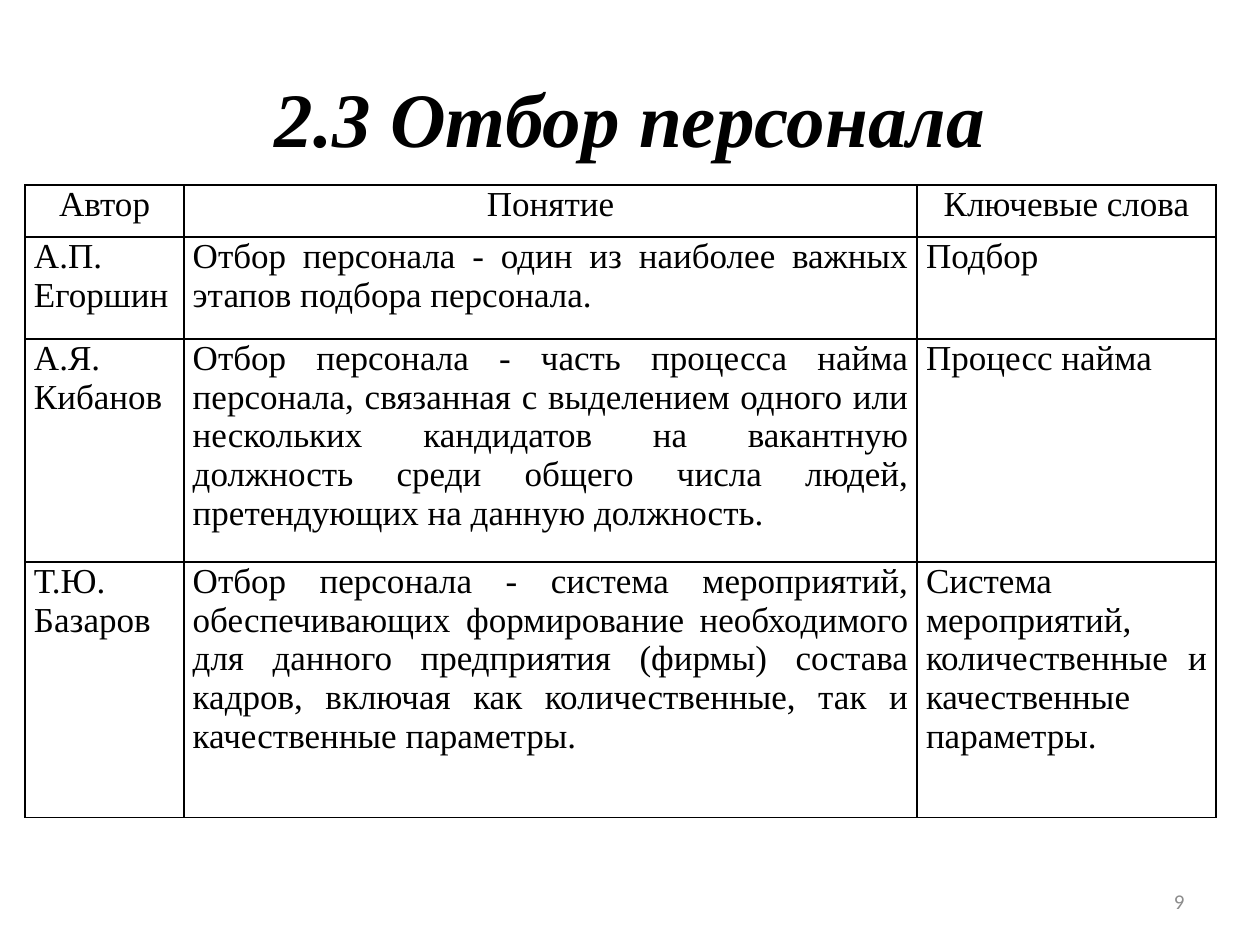
from lxml import etree
from pptx import Presentation
from pptx.dml.color import RGBColor
from pptx.enum.text import MSO_ANCHOR, PP_ALIGN
from pptx.oxml.ns import qn
from pptx.util import Inches, Pt

BLACK = RGBColor(0x00, 0x00, 0x00)
GRAY = RGBColor(0x8C, 0x8C, 0x8C)
SERIF = "Times New Roman"
COLUMN_WIDTHS = [1.26, 5.82, 2.37]
ROW_HEIGHTS = [0.41, 0.81, 1.77, 2.03]
DEFINITIONS = [
    ["Автор", "Понятие", "Ключевые слова"],
    ["А.П. Егоршин",
     "Отбор персонала - один из наиболее важных этапов подбора персонала.",
     "Подбор"],
    ["А.Я. Кибанов",
     "Отбор персонала - часть процесса найма персонала, связанная с выделением "
     "одного или нескольких кандидатов на вакантную должность среди общего числа "
     "людей, претендующих на данную должность.",
     "Процесс найма"],
    ["Т.Ю. Базаров",
     "Отбор персонала - система мероприятий, обеспечивающих формирование "
     "необходимого для данного предприятия (фирмы) состава кадров, включая как "
     "количественные, так и качественные параметры.",
     "Система мероприятий, количественные и качественные параметры."],
]


def format_paragraph(paragraph, size, alignment, name=SERIF, color=BLACK):
    paragraph.alignment = alignment
    paragraph.font.size = Pt(size)
    paragraph.font.name = name
    paragraph.font.color.rgb = color


def add_title(slide, title_text):
    title = slide.shapes.title
    title.left, title.top = Inches(0.5), Inches(0.3)
    title.width, title.height = Inches(9), Inches(1.25)
    title.text_frame.text = title_text
    title.text_frame.vertical_anchor = MSO_ANCHOR.MIDDLE
    paragraph = title.text_frame.paragraphs[0]
    format_paragraph(paragraph, 44, PP_ALIGN.CENTER)
    paragraph.font.bold = True
    paragraph.font.italic = True


def add_borders(cell):
    properties = cell._tc.get_or_add_tcPr()
    for position, side in enumerate(("a:lnL", "a:lnR", "a:lnT", "a:lnB")):
        line = etree.Element(qn(side), w=str(Pt(1)))
        fill = etree.SubElement(line, qn("a:solidFill"))
        etree.SubElement(fill, qn("a:srgbClr"), val=str(BLACK))
        properties.insert(position, line)


def fill_cell(cell, cell_text, alignment):
    cell.text = cell_text
    cell.fill.background()
    cell.margin_left = cell.margin_right = Inches(0.07)
    cell.margin_top = cell.margin_bottom = 0
    cell.vertical_anchor = MSO_ANCHOR.TOP
    format_paragraph(cell.text_frame.paragraphs[0], 20, alignment)
    add_borders(cell)


def add_definitions_table(slide):
    table = slide.shapes.add_table(
        len(ROW_HEIGHTS), len(COLUMN_WIDTHS), Inches(0.2), Inches(1.47),
        Inches(sum(COLUMN_WIDTHS)), Inches(sum(ROW_HEIGHTS))).table
    table.first_row = False
    table.horz_banding = False
    for column, width in zip(table.columns, COLUMN_WIDTHS):
        column.width = Inches(width)
    for row_index, (row, height) in enumerate(zip(table.rows, ROW_HEIGHTS)):
        row.height = Inches(height)
        alignment = PP_ALIGN.JUSTIFY if row_index else PP_ALIGN.CENTER
        for cell, cell_text in zip(row.cells, DEFINITIONS[row_index]):
            fill_cell(cell, cell_text, alignment)


def add_page_number(slide, number):
    box = slide.shapes.add_textbox(Inches(7.17), Inches(6.95), Inches(2.33), Inches(0.4))
    frame = box.text_frame
    frame.word_wrap = True
    frame.vertical_anchor = MSO_ANCHOR.MIDDLE
    frame.text = str(number)
    format_paragraph(frame.paragraphs[0], 12, PP_ALIGN.RIGHT, "Calibri", GRAY)


def main():
    presentation = Presentation()
    presentation.slide_width = Inches(10)
    presentation.slide_height = Inches(7.5)
    slide = presentation.slides.add_slide(presentation.slide_layouts[5])
    add_title(slide, "2.3 Отбор персонала")
    add_definitions_table(slide)
    add_page_number(slide, 9)
    presentation.save("out.pptx")


if __name__ == "__main__":
    main()
